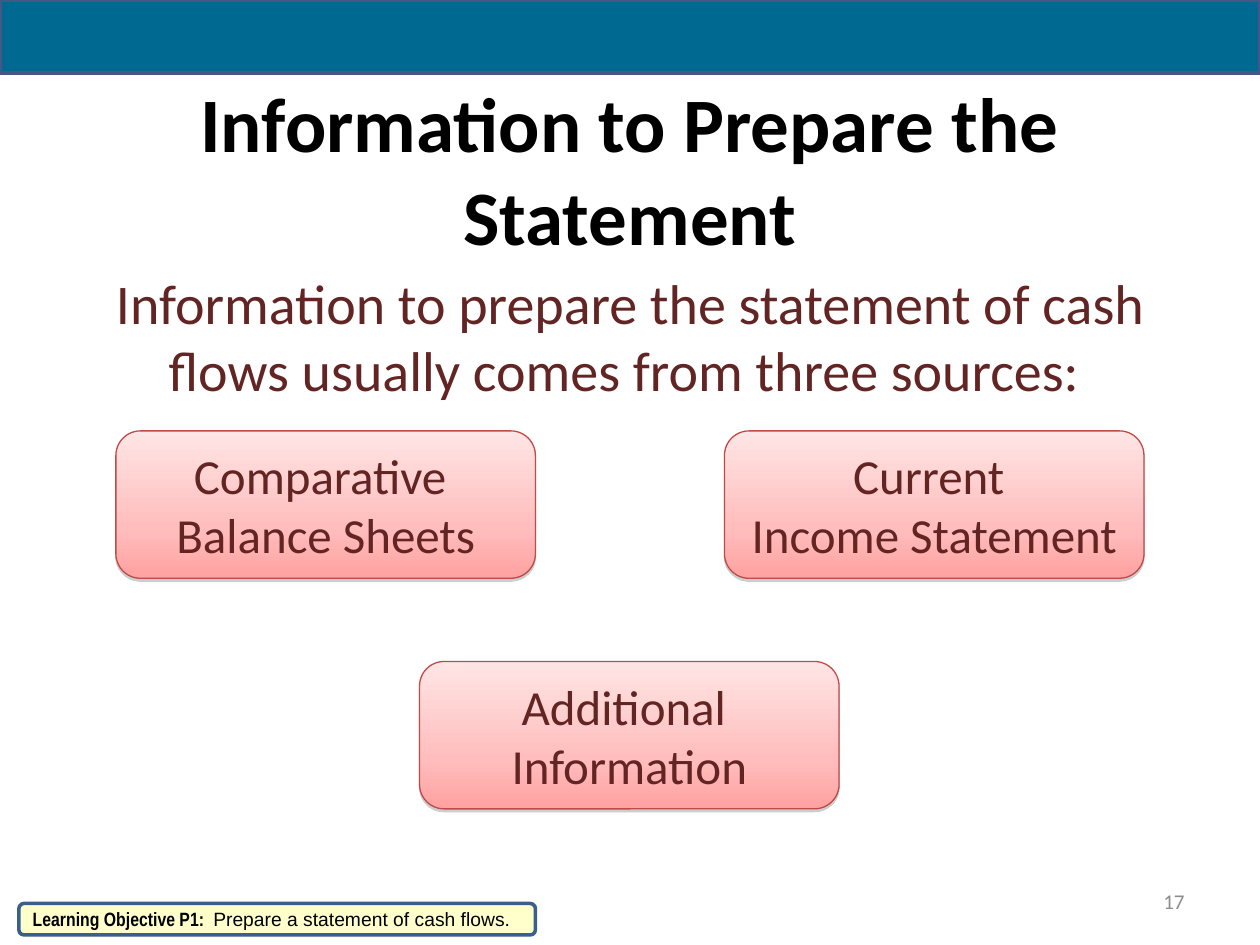
"""Build the slide on the sources of a cash flow statement."""
from typing import Any, NamedTuple

from lxml.etree import SubElement as Sub
from pptx import Presentation
from pptx.dml.color import RGBColor as RGB
from pptx.enum.shapes import MSO_SHAPE as Kind
from pptx.enum.text import MSO_ANCHOR as Anchor, PP_ALIGN as Align
from pptx.oxml.ns import qn
from pptx.util import Inches, Pt

HUE = {
    "band": "006991", "edge": "475785", "text": "632523", "rim": "BE4B48",
    "black": "000000", "gray": "8C8C8C", "shade": "808080",
    "note": "FFFFCC", "frame": "3A5F8C",
    "top": "FFE5E5", "mid": "FFBEBD", "base": "FFA2A1",
}
STOPS = [(0, "top"), (65, "mid"), (100, "base")]
WIDE, HIGH = 3.33, 1.17


class Box(NamedTuple):
    """Place of an item in inches."""
    left: float
    top: float
    width: float
    height: float


class Run(NamedTuple):
    """Words with their look."""
    words: str
    size: float
    hue: str = "text"
    face: str = "Calibri"
    bold: bool = False


class Card(NamedTuple):
    """Source card with its corner and lines."""
    left: float
    top: float
    lines: tuple[str, str]


CARDS = [
    Card(0.92, 3.42, ("Comparative ", "Balance Sheets")),
    Card(5.75, 3.42, ("Current ", "Income Statement")),
    Card(3.33, 5.25, ("Additional ", "Information")),
]


def tint(name: str) -> RGB:
    """Return a named colour."""
    return RGB.from_string(HUE[name])


def place(box: Box) -> list[int]:
    """Convert a box to slide lengths."""
    return [Inches(val) for val in box]


def write(item: Any, rows: list[list[Run]], align: Any = Align.CENTER,
          anchor: Any = Anchor.MIDDLE) -> None:
    """Fill an item with paragraphs of runs."""
    frame = item.text_frame
    frame.word_wrap = True
    frame.vertical_anchor = anchor
    for num, row in enumerate(rows):
        para = frame.add_paragraph() if num else frame.paragraphs[0]
        para.alignment = align
        for part in row:
            run = para.add_run()
            run.text = part.words
            look = {"size": Pt(part.size), "name": part.face, "bold": part.bold}
            for key, val in look.items():
                setattr(run.font, key, val)
            run.font.color.rgb = tint(part.hue)


def label(slide: Any, box: Box, run: Run, align: Any = Align.CENTER,
          anchor: Any = Anchor.MIDDLE) -> None:
    """Add a text box with one run."""
    write(slide.shapes.add_textbox(*place(box)), [[run]], align, anchor)


def panel(slide: Any, kind: Any, box: Box, fill: str, rim: str, width: float) -> Any:
    """Add a filled and outlined shape without a shadow."""
    item = slide.shapes.add_shape(kind, *place(box))
    item.shadow.inherit = False
    item.fill.solid()
    item.fill.fore_color.rgb = tint(fill)
    item.line.color.rgb = tint(rim)
    item.line.width = Pt(width)
    return item


def blend(item: Any) -> None:
    """Give an item a downward gradient."""
    item.fill.gradient()
    item.fill.gradient_angle = 270
    stops = item.element.spPr.find(".//" + qn("a:gsLst"))
    for old in list(stops):
        stops.remove(old)
    for spot, name in STOPS:
        stop = Sub(stops, qn("a:gs"), pos=str(spot * 1000))
        Sub(stop, qn("a:srgbClr"), val=HUE[name])


def shade(item: Any) -> None:
    """Give an item a soft shadow below."""
    group = item.element.spPr.find(qn("a:effectLst"))
    cast = Sub(group, qn("a:outerShdw"), blurRad="0", dist=str(Pt(1.6)),
               dir="5400000", rotWithShape="0")
    color = Sub(cast, qn("a:srgbClr"), val=HUE["shade"])
    Sub(color, qn("a:alpha"), val="38000")


def draw(slide: Any, card: Card) -> None:
    """Draw a source card."""
    box = Box(card.left, card.top, WIDE, HIGH)
    item = panel(slide, Kind.ROUNDED_RECTANGLE, box, "top", "rim", 0.75)
    blend(item)
    shade(item)
    write(item, [[Run(line, 28)] for line in card.lines])


def main() -> None:
    """Build and save the slide."""
    deck = Presentation()
    deck.slide_width, deck.slide_height = Inches(10), Inches(7.5)
    slide = deck.slides.add_slide(deck.slide_layouts[6])
    label(slide, Box(0.5, 0.67, 9, 1.33),
          Run("Information to Prepare the Statement", 44, "black", bold=True))
    for card in CARDS:
        draw(slide, card)
    label(slide, Box(0.67, 2.08, 8.67, 1.18),
          Run("Information to prepare the statement of cash flows "
              "usually comes from three sources: ", 32), anchor=Anchor.TOP)
    panel(slide, Kind.RECTANGLE, Box(0, 0, 10, 0.58), "band", "edge", 2.25)
    label(slide, Box(7.17, 6.95, 2.33, 0.4), Run("17", 12, "gray"), Align.RIGHT)
    goal = panel(slide, Kind.ROUNDED_RECTANGLE, Box(0.15, 7.17, 4.1, 0.25),
                 "note", "frame", 2)
    write(goal, [[
        Run("Learning Objective P1:  ", 11, "black", "Arial Narrow", True),
        Run("Prepare a statement of cash flows.", 11, "black", "Arial"),
    ]], Align.LEFT)
    deck.save("out.pptx")


if __name__ == "__main__":
    main()
